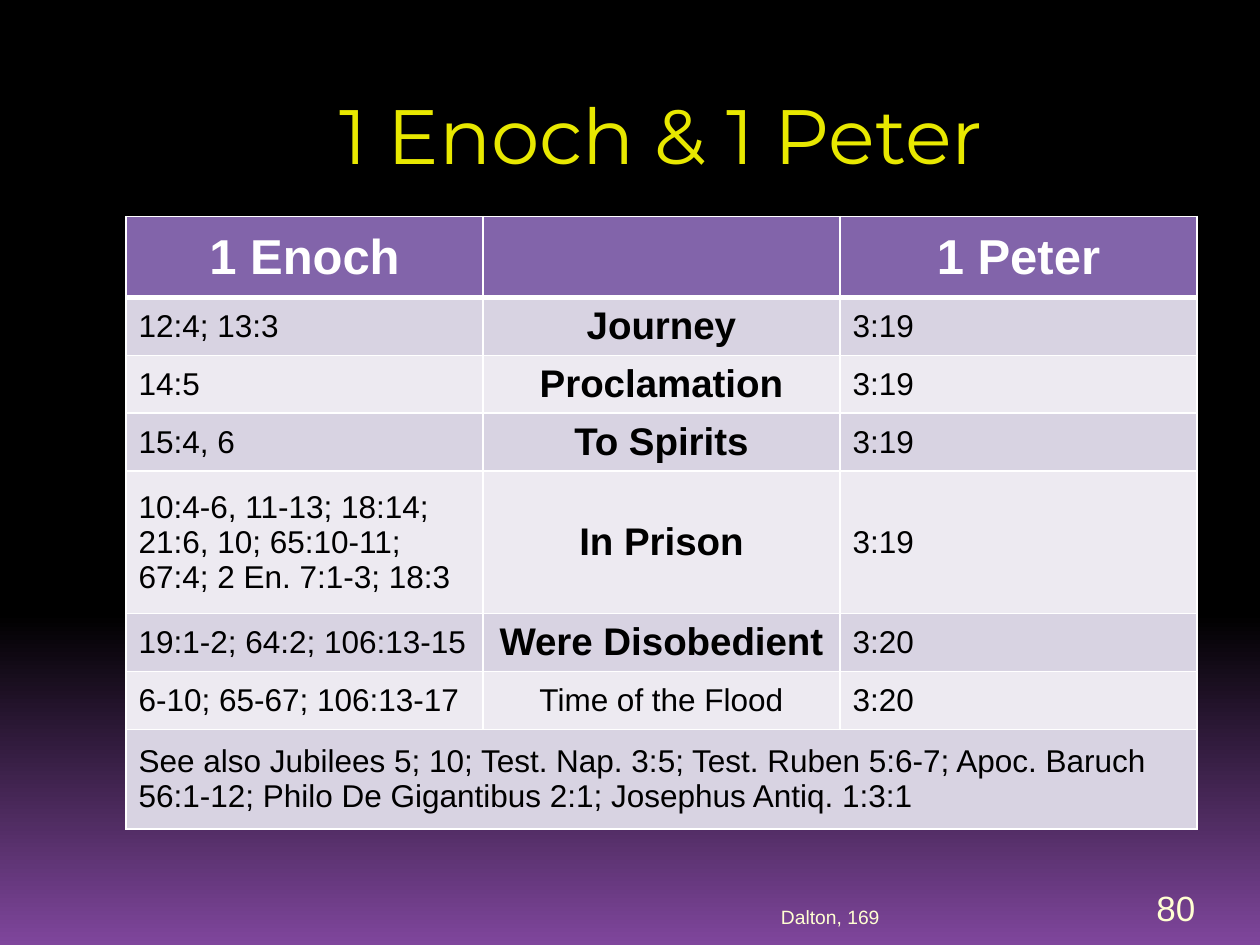
from lxml.etree import SubElement
from pptx import Presentation
from pptx.dml.color import RGBColor
from pptx.enum.text import MSO_ANCHOR as Anchor, PP_ALIGN as Align
from pptx.oxml.ns import qn
from pptx.util import Inches, Pt

COLORS = {
    "black": "000000", "purple": "7F469C", "title": "E8E800", "footer": "FFFFD2",
    "header": "8264AA", "odd": "D8D3E2", "even": "EDEAF1", "white": "FFFFFF",
}
TITLE = "1 Enoch & 1 Peter"
HEADER = ("1 Enoch", "", "1 Peter")
PARALLELS = [
    ("12:4; 13:3", "Journey", "3:19"),
    ("14:5", "Proclamation", "3:19"),
    ("15:4, 6", "To Spirits", "3:19"),
    ("10:4-6, 11-13; 18:14; 21:6, 10; 65:10-11; 67:4; 2 En. 7:1-3; 18:3",
     "In Prison", "3:19"),
    ("19:1-2; 64:2; 106:13-15", "Were Disobedient", "3:20"),
    ("6-10; 65-67; 106:13-17", "Time of the Flood", "3:20"),
]
PLAIN_THEME = "Time of the Flood"
SEE_ALSO = ("See also Jubilees 5; 10; Test. Nap. 3:5; Test. Ruben 5:6-7; "
            "Apoc. Baruch 56:1-12; Philo De Gigantibus 2:1; Josephus Antiq. 1:3:1")
ROWS = [HEADER, *PARALLELS, (SEE_ALSO, "", "")]
ROW_HEIGHTS = [0.64, 0.46, 0.46, 0.46, 1.13, 0.46, 0.46, 0.79]
LEFT, WIDTH = 1, 8.5
FOOTERS = [  # text, left, width, size, alignment
    ("Dalton, 169", 1, 6.08, 11, Align.RIGHT),
    ("80", 9.08, 0.83, 20, Align.LEFT),
]


def rgb(name):
    return RGBColor.from_string(COLORS[name])


def write(frame, text, size, color, font="Arial", bold=False, align=Align.LEFT):
    para = frame.paragraphs[0]
    para.alignment = align
    span = para.add_run()
    span.text = text
    span.font.name = font
    span.font.size = Pt(size)
    span.font.bold = bold
    span.font.color.rgb = rgb(color)


def set_borders(cell, **widths):
    """Draw white cell edges; widths are points keyed by L, R, T, B."""
    properties = cell._tc.get_or_add_tcPr()
    for side, width in widths.items():
        line = SubElement(properties, qn(f"a:ln{side}"), w=str(Pt(width)))
        fill = SubElement(line, qn("a:solidFill"))
        SubElement(fill, qn("a:srgbClr"), val=COLORS["white"])


def paint_background(slide):
    fill = slide.background.fill
    fill.gradient()
    fill.gradient_angle = 270
    for stop, position, color in zip(fill.gradient_stops, (0.65, 1), ("black", "purple")):
        stop.position = position
        stop.color.rgb = rgb(color)


def add_title(slide):
    title = slide.shapes.title
    title.left, title.top = Inches(LEFT), Inches(0.56)
    title.width, title.height = Inches(WIDTH), Inches(1)
    title.text_frame.vertical_anchor = Anchor.MIDDLE
    write(title.text_frame, TITLE, 44, "title", font="Montserrat", align=Align.CENTER)


def add_parallels_table(slide):
    table = slide.shapes.add_table(
        len(ROWS), len(HEADER), Inches(LEFT), Inches(1.72),
        Inches(WIDTH), Inches(sum(ROW_HEIGHTS))).table
    for row, height in zip(table.rows, ROW_HEIGHTS):
        row.height = Inches(height)
    for r, texts in enumerate(ROWS):
        is_header = r == 0
        fill_color = "header" if is_header else "odd" if r % 2 else "even"
        for c, text in enumerate(texts):
            cell = table.cell(r, c)
            set_borders(cell, L=1, R=1, T=3 if r == 1 else 1, B=3 if is_header else 1)
            cell.fill.solid()
            cell.fill.fore_color.rgb = rgb(fill_color)
            cell.vertical_anchor = Anchor.MIDDLE
            if not text:
                continue
            is_theme = c == 1
            bold = is_header or (is_theme and text != PLAIN_THEME)
            write(cell.text_frame, text,
                  size=28 if is_header else 22 if bold else 18,
                  color="white" if is_header else "black", bold=bold,
                  align=Align.CENTER if is_header or is_theme else Align.LEFT)
    last = len(ROWS) - 1
    table.cell(last, 0).merge(table.cell(last, len(HEADER) - 1))


def add_footers(slide):
    for text, left, width, size, align in FOOTERS:
        box = slide.shapes.add_textbox(
            Inches(left), Inches(7.02), Inches(width), Inches(0.4))
        box.text_frame.word_wrap = True
        box.text_frame.vertical_anchor = Anchor.BOTTOM
        write(box.text_frame, text, size, "footer", align=align)


def main():
    deck = Presentation()
    deck.slide_width, deck.slide_height = Inches(10), Inches(7.5)
    slide = deck.slides.add_slide(deck.slide_layouts[5])
    paint_background(slide)
    add_title(slide)
    add_parallels_table(slide)
    add_footers(slide)
    deck.save("out.pptx")


if __name__ == "__main__":
    main()
